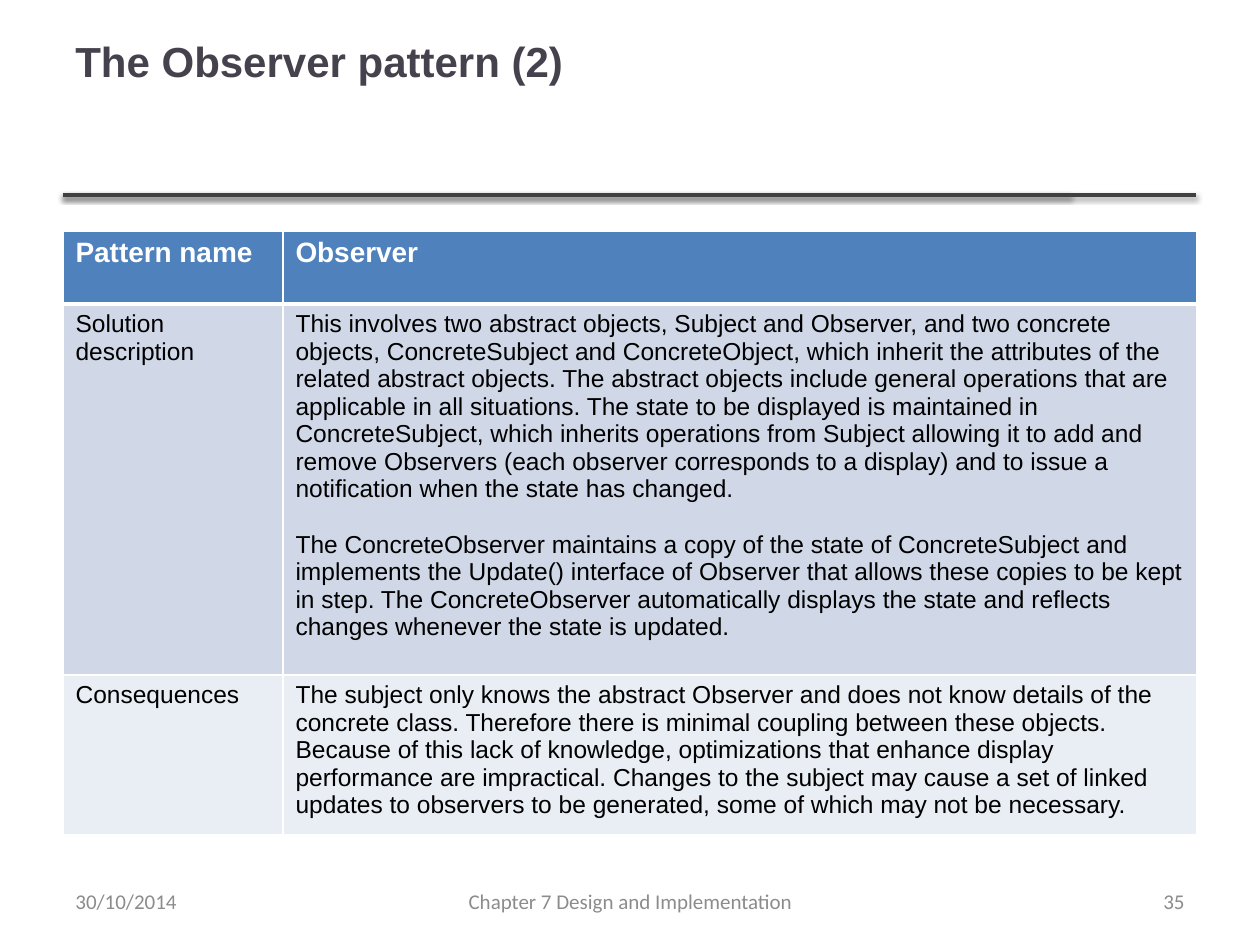
from lxml.etree import SubElement
from pptx import Presentation
from pptx.dml.color import RGBColor
from pptx.enum.shapes import MSO_CONNECTOR
from pptx.enum.text import MSO_ANCHOR, PP_ALIGN
from pptx.oxml import parse_xml
from pptx.oxml.ns import nsdecls, qn
from pptx.util import Emu, Pt

# Content
TITLE = "The Observer pattern (2)"
ROWS = [
    ("header", ["Pattern name"], ["Observer"]),
    ("dark", ["Solution description"], [
        "This involves two abstract objects, Subject and Observer, and two concrete objects, "
        "ConcreteSubject and ConcreteObject, which inherit the attributes of the related abstract "
        "objects. The abstract objects include general operations that are applicable in all "
        "situations. The state to be displayed is maintained in ConcreteSubject, which inherits "
        "operations from Subject allowing it to add and remove Observers (each observer corresponds "
        "to a display) and to issue a notification when the state has changed.",
        "The ConcreteObserver maintains a copy of the state of ConcreteSubject and implements the "
        "Update() interface of Observer that allows these copies to be kept in step. The "
        "ConcreteObserver automatically displays the state and reflects changes whenever the state "
        "is updated."]),
    ("light", ["Consequences"], [
        "The subject only knows the abstract Observer and does not know details of the concrete "
        "class. Therefore there is minimal coupling between these objects. Because of this lack of "
        "knowledge, optimizations that enhance display performance are impractical. Changes to the "
        "subject may cause a set of linked updates to observers to be generated, some of which may "
        "not be necessary."]),
]
FOOTERS = [  # text, left, width, alignment
    ("Chapter 7 Design and Implementation", 431, 399, PP_ALIGN.CENTER),
    ("35", 903, 294, PP_ALIGN.RIGHT),
    ("30/10/2014", 63, 294, PP_ALIGN.LEFT),
]

# Theme
BODY = {"name": "Arial", "size": Pt(14), "bold": False, "color": "000000"}
THEME = {
    "title": {"name": "Arial", "size": Pt(24), "bold": True, "color": "46424D"},
    "header": {"name": "Arial", "size": Pt(16), "bold": True, "color": "FFFFFF"},
    "dark": BODY,
    "light": BODY,
    "footer": {"name": "Calibri", "size": Pt(12), "bold": False, "color": "8C8C8C"},
    "fills": {"header": "4F81BD", "dark": "D0D8E8", "light": "E9EDF4"},
    "border": "FFFFFF",
    "rule": "404040",
    "paragraph_gap": Pt(16),
}

# Layout in px
SLIDE_SIZE = (1260, 945)
LEFT, WIDTH = 63, 1134
RULE_TOP, RULE_ENDS = 195, (1070, 1196)
TABLE_TOP, COLUMNS, ROW_HEIGHTS = 231, (220, 914), (73, 371, 149)
FOOTER_TOP, FOOTER_HEIGHT = 876, 50


def px(value):
    return Emu(round(value * 914400 / 126))


def write(frame, texts, style, alignment=PP_ALIGN.LEFT):
    for index, text in enumerate(texts):
        paragraph = frame.add_paragraph() if index else frame.paragraphs[0]
        paragraph.alignment = alignment
        if index:
            paragraph.space_before = THEME["paragraph_gap"]
        run = paragraph.add_run()
        run.text = text
        for name, value in THEME[style].items():
            if name == "color":
                run.font.color.rgb = RGBColor.from_string(value)
            else:
                setattr(run.font, name, value)


def add_text(slide, box, text, style, alignment=PP_ALIGN.LEFT):
    frame = slide.shapes.add_textbox(*map(px, box)).text_frame
    frame.word_wrap = True
    frame.vertical_anchor = MSO_ANCHOR.MIDDLE
    write(frame, [text], style, alignment)


def add_rule(slide, right):
    line = slide.shapes.add_connector(
        MSO_CONNECTOR.STRAIGHT, px(LEFT), px(RULE_TOP), px(right), px(RULE_TOP))
    line.line.color.rgb = RGBColor.from_string(THEME["rule"])
    line.line.width = Pt(2)
    line._element.spPr.append(parse_xml(
        f'<a:effectLst {nsdecls("a")}><a:outerShdw blurRad="{Pt(3.1)}" dist="{Pt(1.6)}" '
        'dir="5400000" rotWithShape="0"><a:srgbClr val="000000"><a:alpha val="38000"/>'
        '</a:srgbClr></a:outerShdw></a:effectLst>'))


def add_borders(cell, widths):
    properties = cell._tc.get_or_add_tcPr()
    for side, width in widths.items():
        border = SubElement(properties, qn(f"a:ln{side}"), w=str(Pt(width)))
        fill = SubElement(border, qn("a:solidFill"))
        SubElement(fill, qn("a:srgbClr"), val=THEME["border"])


def add_pattern_table(slide):
    table = slide.shapes.add_table(
        len(ROWS), len(COLUMNS), px(LEFT), px(TABLE_TOP), px(WIDTH), px(sum(ROW_HEIGHTS))).table
    for column, width in zip(table.columns, COLUMNS):
        column.width = px(width)
    for row_index, (style, *texts) in enumerate(ROWS):
        table.rows[row_index].height = px(ROW_HEIGHTS[row_index])
        top, bottom = (3 if row_index == 1 else 1), (3 if row_index == 0 else 1)
        for column_index, paragraphs in enumerate(texts):
            cell = table.cell(row_index, column_index)
            add_borders(cell, {"L": 1, "R": 1, "T": top, "B": bottom})
            cell.fill.solid()
            cell.fill.fore_color.rgb = RGBColor.from_string(THEME["fills"][style])
            write(cell.text_frame, paragraphs, style)


def main():
    presentation = Presentation()
    presentation.slide_width, presentation.slide_height = map(px, SLIDE_SIZE)
    slide = presentation.slides.add_slide(presentation.slide_layouts[6])

    # Rules and title
    for right in RULE_ENDS:
        add_rule(slide, right)
    add_text(slide, (LEFT, -18, WIDTH, 158), TITLE, "title")

    # Pattern table
    add_pattern_table(slide)

    # Footer
    for text, left, width, alignment in FOOTERS:
        add_text(slide, (left, FOOTER_TOP, width, FOOTER_HEIGHT), text, "footer", alignment)

    presentation.save("out.pptx")


if __name__ == "__main__":
    main()
